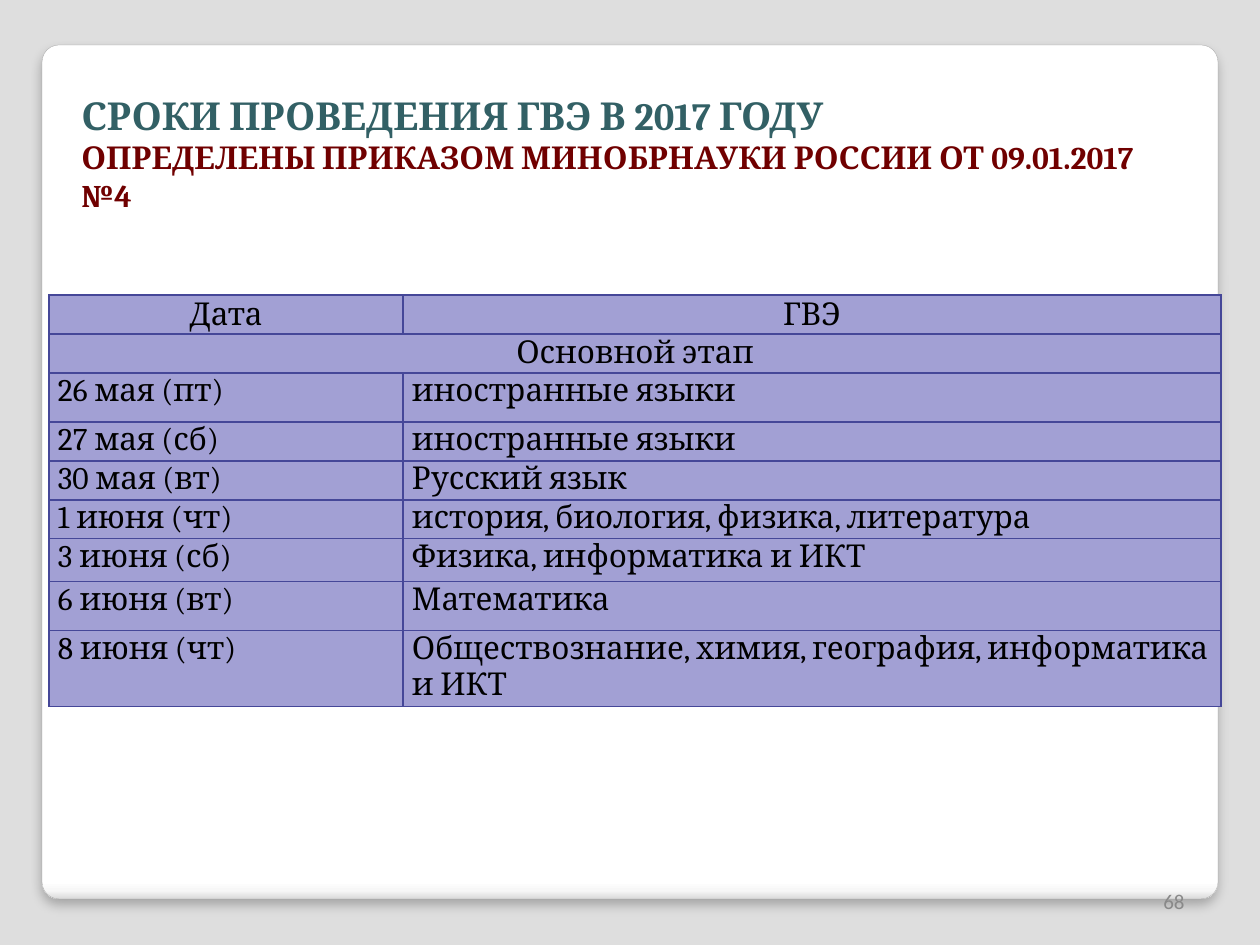
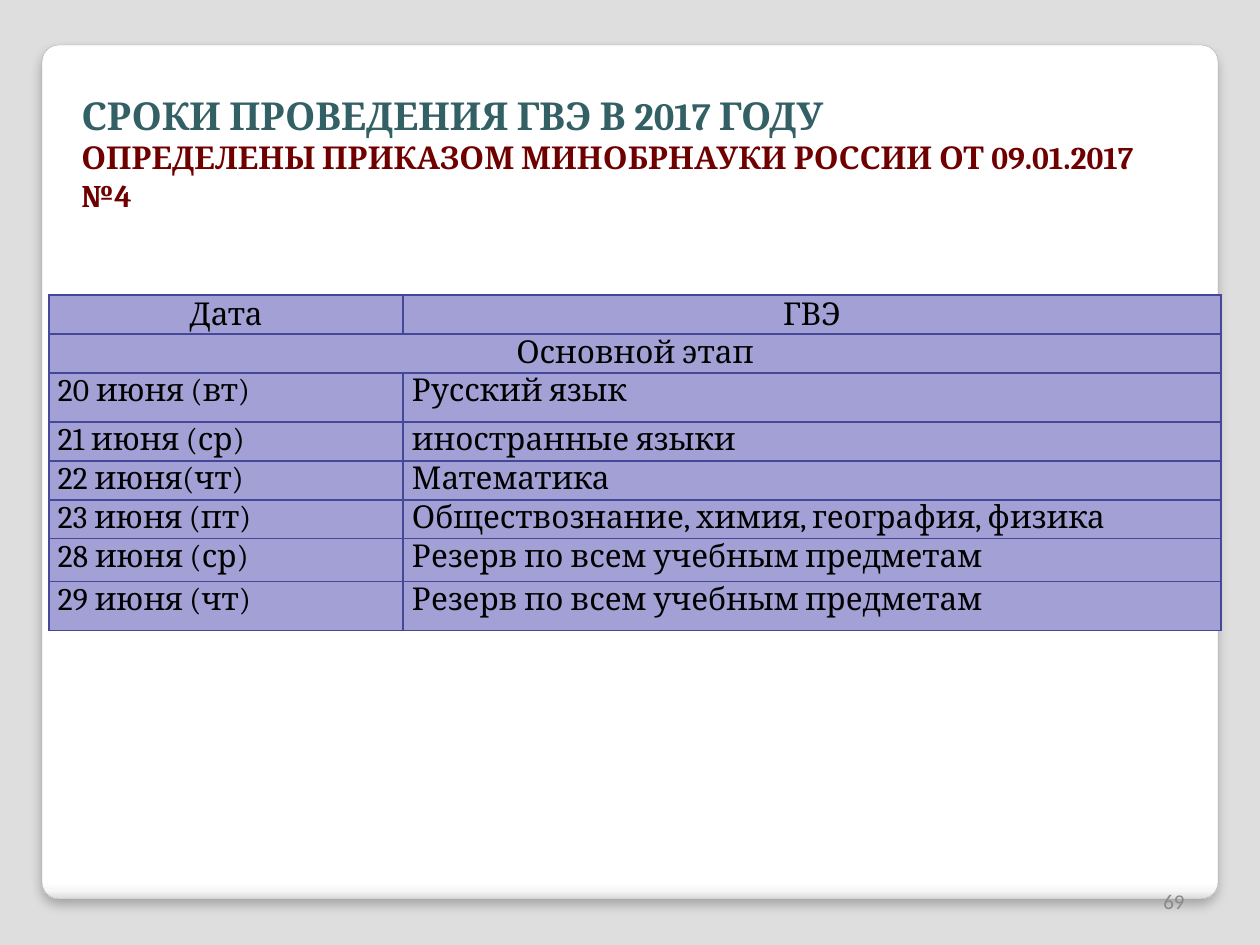
"""Build two slides with the 2017 state final exam timetable."""
from lxml import etree
from pptx import Presentation
from pptx import util as u
from pptx.dml.color import RGBColor
from pptx.enum import shapes, text
from pptx.oxml import ns

HEADINGS = [
    ("СРОКИ ПРОВЕДЕНИЯ ГВЭ В 2017 ГОДУ", 22, "title"),
    ("ОПРЕДЕЛЕНЫ ПРИКАЗОМ МИНОБРНАУКИ РОССИИ ОТ 09.01.2017 №4", 18, "subtitle"),
]
COLUMN_NAMES = ("Дата", "ГВЭ")
STAGE = "Основной этап"
TIMETABLES = {
    68: [
        ("26 мая (пт)", "иностранные языки"),
        ("27 мая (сб)", "иностранные языки"),
        ("30 мая (вт)", "Русский язык"),
        ("1 июня (чт)", "история, биология, физика, литература"),
        ("3 июня (сб)", "Физика, информатика и ИКТ"),
        ("6 июня (вт)", "Математика"),
        ("8 июня (чт)", "Обществознание, химия, география, информатика и ИКТ"),
    ],
    69: [
        ("20 июня (вт)", "Русский язык"),
        ("21 июня (ср)", "иностранные языки"),
        ("22 июня(чт)", "Математика"),
        ("23 июня (пт)", "Обществознание, химия, география, физика"),
        ("28 июня (ср)", "Резерв по всем учебным предметам"),
        ("29 июня (чт)", "Резерв по всем учебным предметам"),
    ],
}

COLORS = {
    "background": "DEDEDE", "card_line": "A4A4A4", "shadow": "000000",
    "title": "326065", "subtitle": "700000", "cell": "A2A0D4",
    "border": "454798", "body": "000000", "number": "898989",
}
CARD_STOPS = [(0, "FFFFFF"), (98, "FFFFFF"), (99, "F7F7F7"), (100, "DADADA")]
SERIF, SANS = "Cambria", "Calibri"
COLUMN_WIDTHS = (354, 818)
ROW_HEIGHTS = (39, 39, 49, 39, 39, 39, 43, 49, 49)
TABLE_LEFT, TABLE_TOP = 49, 295
ALIGN, ANCHOR = text.PP_ALIGN, text.MSO_ANCHOR


def px(length):
    return u.Emu(round(length * 914400 / 126))


def color(name):
    return RGBColor.from_string(COLORS[name])


def xml(body):
    """Parse one DrawingML element."""
    return etree.fromstring(body.replace(">", f' {ns.nsdecls("a")}>', 1))


def add_run(paragraph, content, size, color_name, font=SERIF, bold=False):
    run = paragraph.add_run()
    run.text = content
    run.font.size = u.Pt(size)
    run.font.name = font
    run.font.bold = bold
    run.font.color.rgb = color(color_name)


def add_text_box(slide, box, anchor):
    frame = slide.shapes.add_textbox(*map(px, box)).text_frame
    frame.word_wrap = True
    frame.vertical_anchor = anchor
    return frame


def add_card(slide):
    card = slide.shapes.add_shape(
        shapes.MSO_SHAPE.ROUNDED_RECTANGLE, *map(px, (42, 45, 1176, 854)))
    card.adjustments[0] = 0.02
    card.line.color.rgb = color("card_line")
    card.line.width = u.Pt(0.16)
    stops = "".join(f'<a:gs pos="{position * 1000}"><a:srgbClr val="{value}"/></a:gs>'
                    for position, value in CARD_STOPS)
    properties = card.element.spPr
    properties.insert(2, xml(f'<a:gradFill rotWithShape="1"><a:gsLst>{stops}</a:gsLst>'
                             '<a:lin ang="5400000" scaled="0"/></a:gradFill>'))
    properties.append(xml(
        f'<a:effectLst><a:outerShdw blurRad="{u.Pt(6)}" dist="{u.Pt(4)}" '
        f'dir="5400000" algn="t" rotWithShape="0"><a:srgbClr val="{COLORS["shadow"]}">'
        '<a:alpha val="25000"/></a:srgbClr></a:outerShdw></a:effectLst>'))


def add_title(slide):
    frame = add_text_box(slide, (69, 86, 1120, 134), ANCHOR.TOP)
    paragraph = frame.paragraphs[0]
    for index, (content, size, color_name) in enumerate(HEADINGS):
        if index:
            paragraph.add_line_break()
        add_run(paragraph, content, size, color_name, bold=True)


def style_cell(cell, is_header):
    side, top = (1, 1) if is_header else (9, 0)
    cell.margin_left = cell.margin_right = px(side)
    cell.margin_top, cell.margin_bottom = px(top), px(0)
    cell.fill.solid()
    cell.fill.fore_color.rgb = color("cell")
    properties = cell._tc.get_or_add_tcPr()
    for index, edge in enumerate("LRTB"):
        properties.insert(index, xml(
            f'<a:ln{edge} w="{u.Pt(0.75)}"><a:solidFill>'
            f'<a:srgbClr val="{COLORS["border"]}"/></a:solidFill></a:ln{edge}>'))


def add_timetable(slide, exams):
    rows = [COLUMN_NAMES, (STAGE, ""), *exams]
    heights = ROW_HEIGHTS[:len(rows)]
    table = slide.shapes.add_table(
        len(rows), len(COLUMN_WIDTHS), px(TABLE_LEFT), px(TABLE_TOP),
        px(sum(COLUMN_WIDTHS)), px(sum(heights))).table
    table.first_row = table.horz_banding = False
    for column, width in zip(table.columns, COLUMN_WIDTHS):
        column.width = px(width)
    for row_index, (values, height) in enumerate(zip(rows, heights)):
        table.rows[row_index].height = px(height)
        is_header = row_index < 2
        for column_index, value in enumerate(values):
            cell = table.cell(row_index, column_index)
            style_cell(cell, is_header)
            cell.vertical_anchor = ANCHOR.MIDDLE if row_index == 0 else ANCHOR.TOP
            paragraph = cell.text_frame.paragraphs[0]
            paragraph.alignment = ALIGN.CENTER if is_header else ALIGN.LEFT
            if value:
                add_run(paragraph, value, 18, "body")
    table.cell(1, 0).merge(table.cell(1, 1))


def add_slide_number(slide, number):
    paragraph = add_text_box(slide, (903, 876, 294, 50), ANCHOR.MIDDLE).paragraphs[0]
    paragraph.alignment = ALIGN.RIGHT
    add_run(paragraph, str(number), 12, "number", SANS)


def main():
    presentation = Presentation()
    presentation.slide_width, presentation.slide_height = px(1260), px(945)
    background = presentation.slide_master.background.fill
    background.solid()
    background.fore_color.rgb = color("background")
    for number, exams in TIMETABLES.items():
        slide = presentation.slides.add_slide(presentation.slide_layouts[6])
        add_card(slide)
        add_title(slide)
        add_timetable(slide, exams)
        add_slide_number(slide, number)
    presentation.save("out.pptx")


if __name__ == "__main__":
    main()
